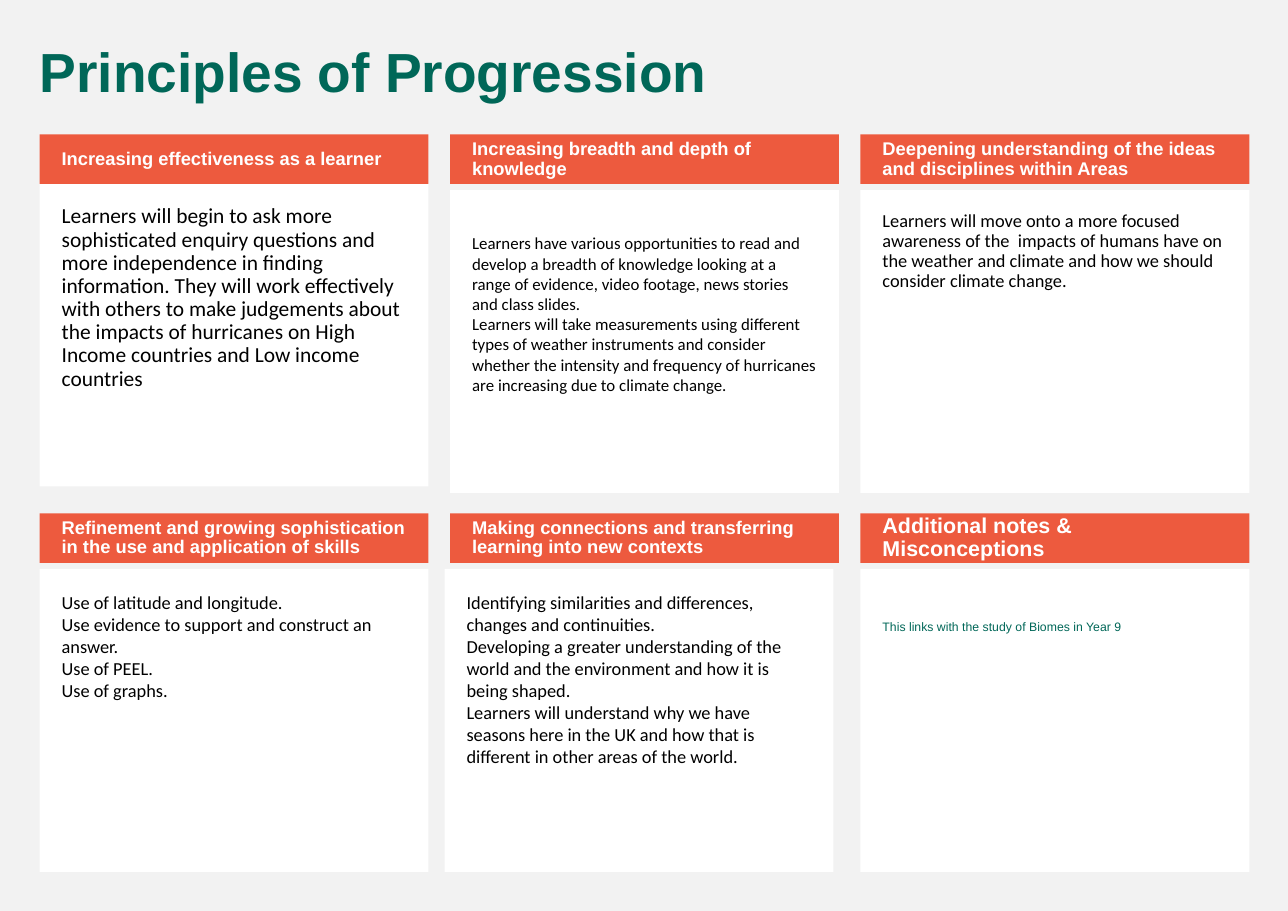
from pptx import Presentation
from pptx.dml.color import RGBColor as RGB
from pptx.enum.shapes import MSO_SHAPE as SHAPE
from pptx.enum.text import MSO_ANCHOR as ANCHOR, MSO_AUTO_SIZE as FIT, PP_ALIGN as ALIGN
from pptx.util import Inches, Pt

GREEN = RGB(0x00, 0x67, 0x58)
CORAL = RGB(0xED, 0x5A, 0x3E)
WHITE = RGB(0xFF, 0xFF, 0xFF)
BLACK = RGB(0x00, 0x00, 0x00)
GREY = RGB(0xF2, 0xF2, 0xF2)

LEFT, TOP = 0.36, 1.22
COL, ROW = 3.725, 3.44
WIDTH, HEAD, BODY = 3.53, 0.45, 2.75
DROP = 0.505

HEADING = {"name": "Arial", "size": Pt(12), "bold": True, "color": WHITE}
TEXT = {"name": "Calibri", "size": Pt(12), "color": BLACK}
NOTE = {"name": "Arial", "size": Pt(8), "color": GREEN}

# heading, heading style, paragraphs, text style, line spacing, body shift, top inset
CARDS = [
    ("Increasing effectiveness as a learner", HEADING,
     ["Learners will begin to ask more sophisticated enquiry questions and "
      "more independence in finding information. They will work effectively with "
      "others to make judgements about the impacts of hurricanes on High Income "
      "countries and Low income countries"],
     TEXT | {"size": Pt(14)}, 0.9, (0, -0.06), 0.2),
    ("Increasing breadth and depth of knowledge", HEADING,
     ["Learners have various opportunities to read and develop a breadth of "
      "knowledge looking at a range of evidence, video footage, news "
      "stories and class slides.",
      "Learners will take measurements using different types of weather "
      "instruments and consider whether the intensity and frequency of "
      "hurricanes are increasing due to climate change."],
     TEXT | {"size": Pt(11)}, 1, (0, 0), 0.39),
    ("Deepening understanding of the ideas and disciplines within Areas", HEADING,
     ["Learners will move onto a more focused awareness of the  impacts of humans "
      "have on the weather and climate and how we should consider climate change."],
     TEXT, 0.9, (0, 0), 0.2),
    ("Refinement and growing sophistication in the use and application of skills",
     HEADING,
     ["Use of latitude and longitude.",
      "Use evidence to support and construct an answer.",
      "Use of PEEL.",
      "Use of graphs."],
     TEXT, 1, (0, 0), 0.2),
    ("Making connections and transferring learning into new contexts", HEADING,
     ["Identifying similarities and differences, changes and continuities.",
      "Developing a greater understanding of the world and the environment and "
      "how it is being shaped.",
      "Learners will understand why we have seasons here in the UK and "
      "how that is different in other areas of the world."],
     TEXT, 1, (-0.05, 0), 0.2),
    ("Additional notes & Misconceptions", HEADING | {"size": Pt(14)},
     ["This links with the study of Biomes in Year 9"],
     NOTE, 0.9, (0, 0), 0.47),
]


def write(frame, lines, style, spacing, anchor, insets):
    """Fill a text frame with left-aligned paragraphs of one style."""
    frame.word_wrap = True
    frame.auto_size = FIT.NONE
    frame.vertical_anchor = anchor
    for side, inset in zip(("left", "top", "right", "bottom"), insets):
        setattr(frame, f"margin_{side}", Inches(inset))
    frame.text = "\n".join(lines)
    for para in frame.paragraphs:
        para.alignment = ALIGN.LEFT
        para.line_spacing = spacing
        para.space_before = Pt(0)
        for key, value in style.items():
            if key == "color":
                para.font.color.rgb = value
            else:
                setattr(para.font, key, value)


def panel(x, y, height, fill):
    box = slide.shapes.add_shape(
        SHAPE.RECTANGLE, Inches(x), Inches(y), Inches(WIDTH), Inches(height))
    box.shadow.inherit = False
    box.fill.solid()
    box.fill.fore_color.rgb = fill
    box.line.fill.background()
    return box.text_frame


deck = Presentation()
deck.slide_width, deck.slide_height = Inches(11.69), Inches(8.27)
slide = deck.slides.add_slide(deck.slide_layouts[5])
slide.background.fill.solid()
slide.background.fill.fore_color.rgb = GREY

title = slide.shapes.title
title.left, title.top = Inches(0.26), Inches(0.36)
title.width, title.height = Inches(11.08), Inches(0.65)
write(title.text_frame, ["Principles of Progression"],
      HEADING | {"size": Pt(36), "color": GREEN}, 0.9, ANCHOR.TOP,
      (0.1, 0.05, 0.1, 0.05))

for index, (head, look, lines, style, spacing, (dx, dy), inset) in enumerate(CARDS):
    row, col = divmod(index, 3)
    x, y = LEFT + col * COL, TOP + row * ROW
    body = panel(x + dx, y + DROP + dy, BODY, WHITE)
    write(body, lines, style, spacing, ANCHOR.TOP, (0.2, inset, 0.2, 0.2))
    write(panel(x, y, HEAD, CORAL), [head], look, 0.9, ANCHOR.MIDDLE,
          (0.2, 0.05, 0.1, 0.05))

deck.save("out.pptx")
